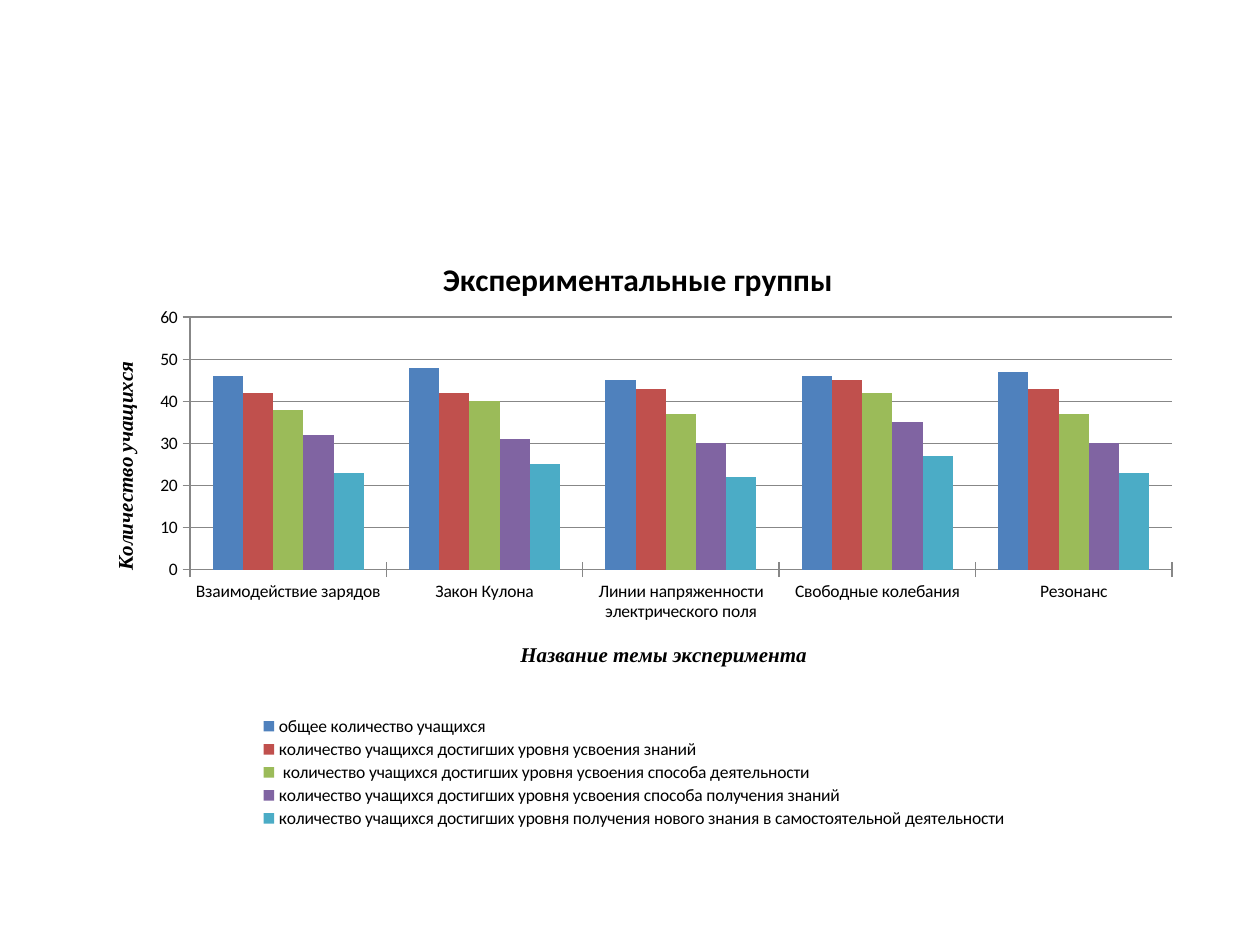
from dataclasses import dataclass

from lxml.etree import SubElement
from pptx import Presentation
from pptx.chart.data import CategoryChartData
from pptx.dml.color import RGBColor
from pptx.enum.chart import XL_CHART_TYPE, XL_LEGEND_POSITION, XL_TICK_MARK
from pptx.oxml import parse_xml
from pptx.oxml.ns import qn
from pptx.util import Pt

NS = "http://schemas.openxmlformats.org/drawingml/2006/chart"


@dataclass(frozen=True)
class Theme:
    ink: str = "000000"
    line: str = "878787"
    sans: str = "Calibri"
    serif: str = "Times New Roman"
    head: float = 18
    axis: float = 12
    text: float = 10


@dataclass(frozen=True)
class Series:
    name: str
    color: str
    counts: tuple[int, ...]


THEME = Theme()
TOPICS = (
    "Взаимодействие зарядов",
    "Закон Кулона",
    "Линии напряженности электрического поля",
    "Свободные колебания",
    "Резонанс",
)
LEVELS = (
    Series("общее количество учащихся ", "4F81BD", (46, 48, 45, 46, 47)),
    Series("количество учащихся достигших уровня усвоения знаний",
           "C0504D", (42, 42, 43, 45, 43)),
    Series(" количество учащихся достигших уровня усвоения способа деятельности",
           "9BBB59", (38, 40, 37, 42, 37)),
    Series("количество учащихся достигших уровня усвоения способа получения знаний",
           "8064A2", (32, 31, 30, 35, 30)),
    Series("количество учащихся достигших уровня получения нового знания "
           "в самостоятельной деятельности ",
           "4BACC6", (23, 25, 22, 27, 23)),
)


def style(font, size: float, face: str = THEME.sans,
          bold: bool = False, italic: bool = False) -> None:
    font.size, font.name = Pt(size), face
    font.bold, font.italic = bold, italic
    font.color.rgb = RGBColor.from_string(THEME.ink)


def write(frame, text: str, **form) -> None:
    """Put one formatted run of text into a text frame."""
    run = frame.paragraphs[0].add_run()
    run.text = text
    style(run.font, **form)


def place(part, index: int, inner: bool = False, **box: float) -> None:
    """Give a chart part a fixed place, in fractions of the chart."""
    for old in part.findall(qn("c:layout")):
        part.remove(old)
    layout = parse_xml(f'<c:layout xmlns:c="{NS}"><c:manualLayout/></c:layout>')
    manual = layout[0]
    if inner:
        SubElement(manual, qn("c:layoutTarget")).set("val", "inner")
    for key in box:
        if key in "xy":
            SubElement(manual, qn(f"c:{key}Mode")).set("val", "edge")
    for key, value in box.items():
        SubElement(manual, qn(f"c:{key}")).set("val", str(value))
    part.insert(index, layout)


def label(title, text: str, x: float, y: float, **form) -> None:
    write(title.text_frame, text, bold=True, **form)
    place(title._element, 1, x=x, y=y)


def rule(line) -> None:
    line.color.rgb = RGBColor.from_string(THEME.line)
    line.width = Pt(0.75)


def trim(axis, text: str, x: float, y: float) -> None:
    """Format an axis and name it."""
    axis.major_tick_mark = XL_TICK_MARK.CROSS
    axis.minor_tick_mark = XL_TICK_MARK.NONE
    rule(axis.format.line)
    style(axis.tick_labels.font, THEME.text)
    label(axis.axis_title, text, x, y,
          size=THEME.axis, face=THEME.serif, italic=True)


def draw(slide) -> None:
    data = CategoryChartData()
    data.categories = TOPICS
    for level in LEVELS:
        data.add_series(level.name, level.counts)
    chart = slide.shapes.add_chart(
        XL_CHART_TYPE.COLUMN_CLUSTERED,
        Pt(36), Pt(126), Pt(648), Pt(356.4), data).chart
    style(chart.font, THEME.text)

    # Columns
    plot = chart.plots[0]
    plot.gap_width, plot.overlap = 150, 0
    plot.vary_by_categories = False
    for bars, level in zip(plot.series, LEVELS):
        bars.format.fill.solid()
        bars.format.fill.fore_color.rgb = RGBColor.from_string(level.color)
        bars.invert_if_negative = False
    area = chart._chartSpace.find(".//" + qn("c:plotArea"))
    place(area, 0, inner=True, x=0.112, y=0.155, w=0.866, h=0.405)

    # Title and axes
    chart.has_title = True
    label(chart.chart_title, "Экспериментальные группы", 0.33, 0.05,
          size=THEME.head)
    trim(chart.category_axis, "Название темы эксперимента", 0.4, 0.67)
    trim(chart.value_axis, "Количество учащихся", 0.04, 0.22)
    chart.value_axis.has_major_gridlines = True
    rule(chart.value_axis.major_gridlines.format.line)

    # Legend
    chart.has_legend = True
    legend = chart.legend
    legend.position = XL_LEGEND_POSITION.BOTTOM
    legend.include_in_layout = False
    style(legend.font, THEME.text)
    place(legend._element, 1, x=0.17, y=0.79, w=0.67, h=0.19)


def main() -> None:
    deck = Presentation()
    deck.slide_width, deck.slide_height = Pt(720), Pt(540)
    draw(deck.slides.add_slide(deck.slide_layouts[6]))
    deck.save("out.pptx")


if __name__ == "__main__":
    main()
